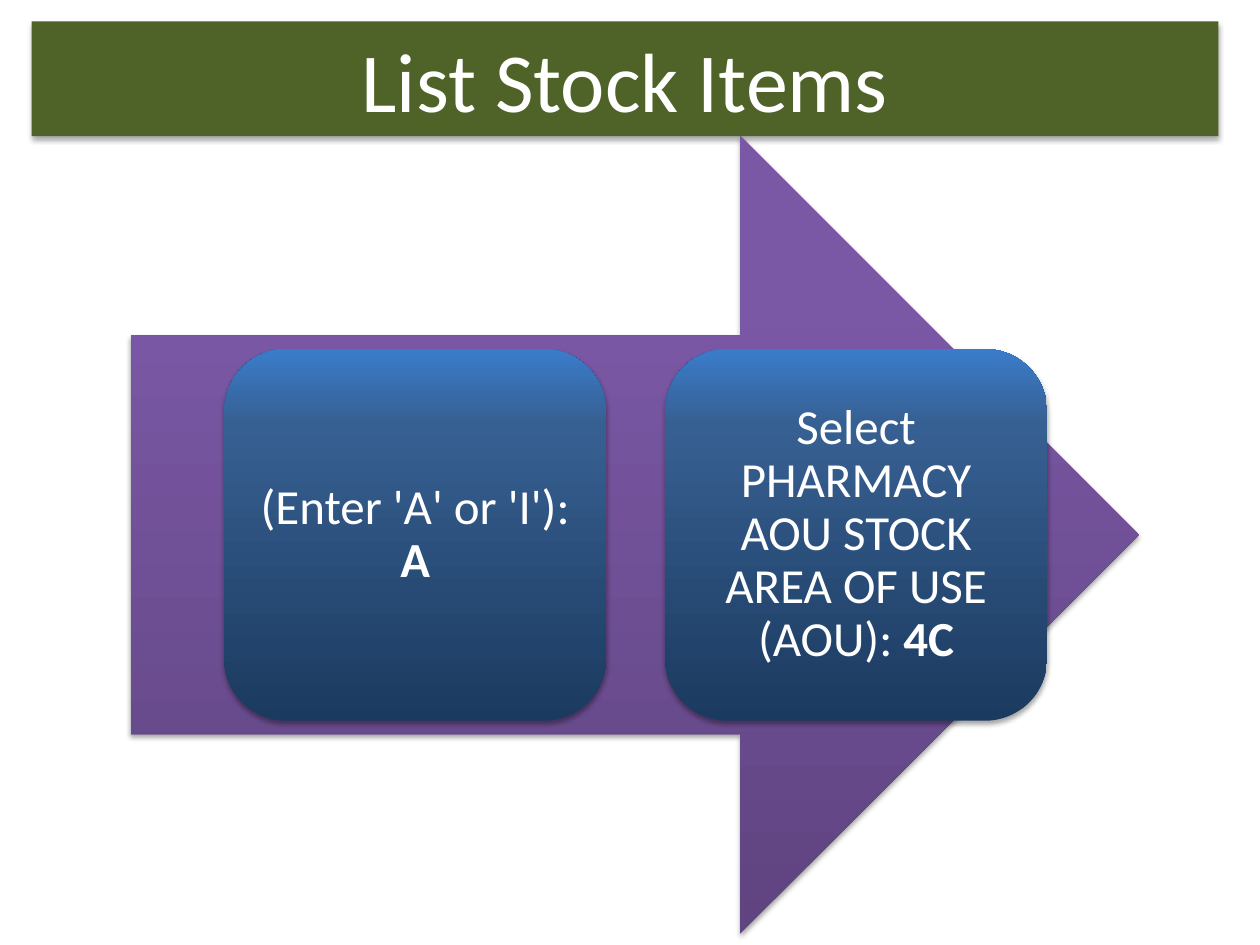
from lxml.etree import SubElement
from pptx import Presentation
from pptx.dml.color import RGBColor
from pptx.enum.shapes import MSO_SHAPE
from pptx.enum.text import MSO_ANCHOR, MSO_AUTO_SIZE, PP_ALIGN
from pptx.oxml import parse_xml
from pptx.oxml.ns import nsdecls, qn
from pptx.util import Inches, Pt

# Content
TITLE = "List Stock Items"
STEPS = [
    ("(Enter 'A' or 'I'): ", "A"),
    ("Select PHARMACY AOU STOCK AREA OF USE (AOU): ", "4C"),
]

# Format
COLORS = {"banner": "4F6228", "text": "FFFFFF", "shadow": "000000"}
GRADIENTS = {
    "arrow": [(0, "5F4480"), (80, "7B58A6"), (100, "7C57A8")],
    "step": [(0, "1B3A5F"), (80, "376092"), (100, "3A7CCB")],
}
TITLE_BOX = (0.25, 0.17, 9.42, 0.91)
ARROW_BOX = (1.04, 1.08, 8, 6.33)
STEP_LEFT, STEP_PITCH, STEP_WIDTH, STEP_HEIGHT = 1.78, 3.5, 3.03, 2.95
STEP_TOP = ARROW_BOX[1] + (ARROW_BOX[3] - STEP_HEIGHT) / 2
STEP_FRAME = {
    "word_wrap": True,
    "vertical_anchor": MSO_ANCHOR.MIDDLE,
    **{f"margin_{side}": Inches(0.12) for side in ("left", "top", "right", "bottom")},
}
TITLE_FRAME = {
    "word_wrap": True,
    "vertical_anchor": MSO_ANCHOR.MIDDLE,
    "auto_size": MSO_AUTO_SIZE.NONE,
}


def set_values(target, values):
    for name, value in values.items():
        setattr(target, name, value)


def add_shadow(shape):
    shape.shadow.inherit = False
    effects = shape._element.spPr.find(qn("a:effectLst"))
    shadow = SubElement(effects, qn("a:outerShdw"), blurRad=str(Pt(3.1)),
                        dist=str(Pt(1.8)), dir="5400000", rotWithShape="0")
    color = SubElement(shadow, qn("a:srgbClr"), val=COLORS["shadow"])
    SubElement(color, qn("a:alpha"), val="35000")


def add_gradient_shape(slide, kind, box, stops):
    shape = slide.shapes.add_shape(kind, *map(Inches, box))
    shape.line.fill.background()
    add_shadow(shape)
    stop_xml = "".join(
        f'<a:gs pos="{position * 1000}"><a:srgbClr val="{color}"/></a:gs>'
        for position, color in stops)
    gradient = parse_xml(
        f'<a:gradFill {nsdecls("a")} rotWithShape="1"><a:gsLst>{stop_xml}</a:gsLst>'
        '<a:lin ang="16200000" scaled="0"/></a:gradFill>')
    shape._element.spPr.find(qn("a:prstGeom")).addnext(gradient)
    return shape


def add_run(paragraph, text, size, bold=False):
    run = paragraph.add_run()
    run.text = text
    set_values(run.font, {"name": "Calibri", "size": Pt(size), "bold": bold})
    run.font.color.rgb = RGBColor.from_string(COLORS["text"])


def main():
    presentation = Presentation()
    presentation.slide_width, presentation.slide_height = Inches(10), Inches(7.5)
    slide = presentation.slides.add_slide(presentation.slide_layouts[5])

    # Title banner
    title = slide.shapes.title
    set_values(title, dict(zip(("left", "top", "width", "height"), map(Inches, TITLE_BOX))))
    title.fill.solid()
    title.fill.fore_color.rgb = RGBColor.from_string(COLORS["banner"])
    add_shadow(title)
    set_values(title.text_frame, TITLE_FRAME)
    paragraph = title.text_frame.paragraphs[0]
    paragraph.alignment = PP_ALIGN.CENTER
    add_run(paragraph, TITLE, 48)

    # Process arrow
    add_gradient_shape(slide, MSO_SHAPE.RIGHT_ARROW, ARROW_BOX, GRADIENTS["arrow"])

    # Steps on the arrow
    for index, (prompt, answer) in enumerate(STEPS):
        box = (STEP_LEFT + index * STEP_PITCH, STEP_TOP, STEP_WIDTH, STEP_HEIGHT)
        step = add_gradient_shape(slide, MSO_SHAPE.ROUNDED_RECTANGLE, box, GRADIENTS["step"])
        set_values(step.text_frame, STEP_FRAME)
        paragraph = step.text_frame.paragraphs[0]
        set_values(paragraph, {"alignment": PP_ALIGN.CENTER, "line_spacing": 0.9})
        add_run(paragraph, prompt, 28)
        add_run(paragraph, answer, 28, bold=True)

    presentation.save("out.pptx")


if __name__ == "__main__":
    main()
